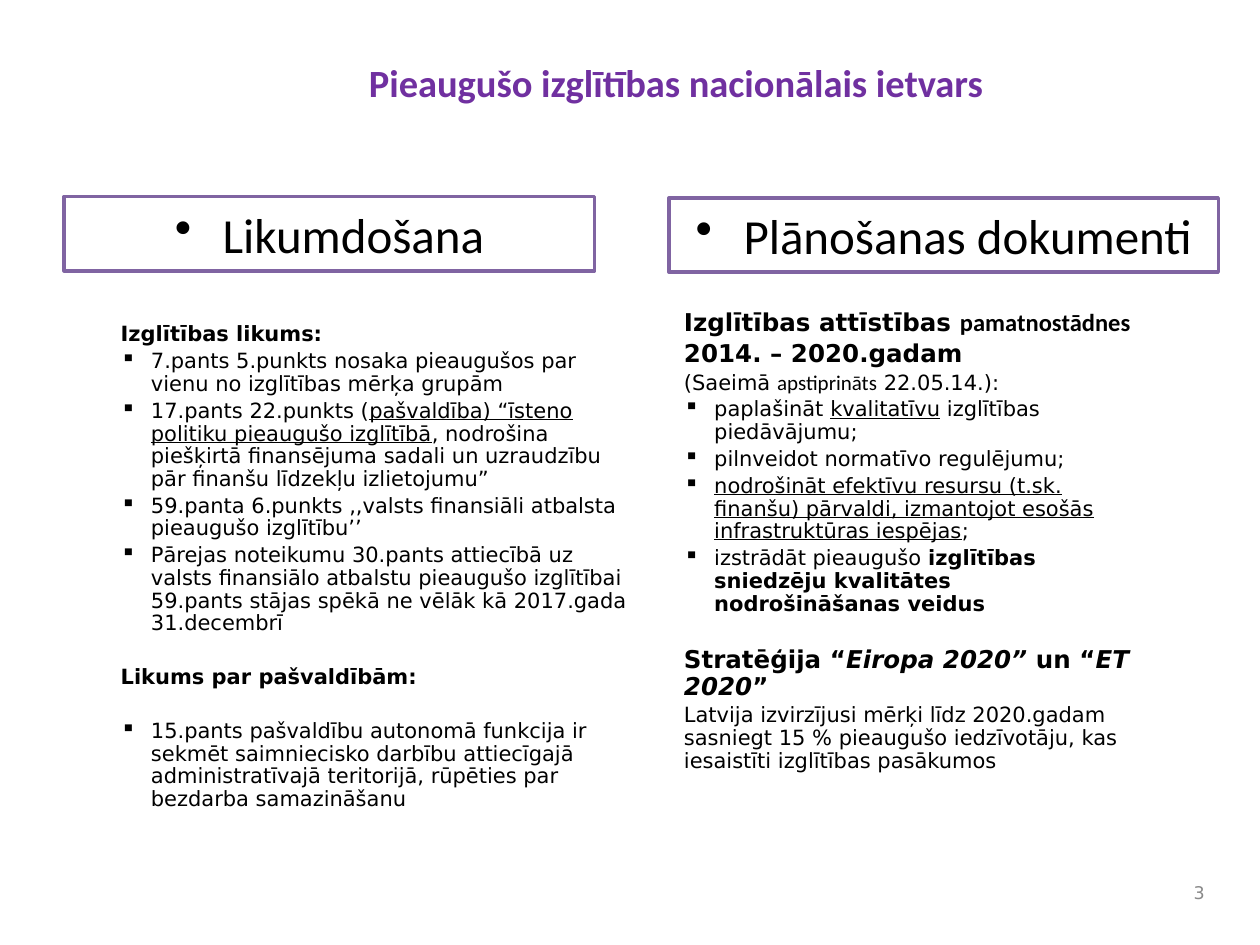
from dataclasses import dataclass
from typing import Optional

from lxml import etree
from pptx import Presentation
from pptx.dml.color import RGBColor
from pptx.enum.shapes import MSO_SHAPE
from pptx.enum.text import MSO_ANCHOR, PP_ALIGN
from pptx.oxml.ns import qn
from pptx.util import Inches, Pt

BLACK = RGBColor(0x00, 0x00, 0x00)
WHITE = RGBColor(0xFF, 0xFF, 0xFF)
PURPLE = RGBColor(0x70, 0x30, 0xA0)
BORDER = RGBColor(0x80, 0x64, 0xA2)
GRAY = RGBColor(0x89, 0x89, 0x89)
RECTANGLE = MSO_SHAPE.RECTANGLE
LEFT, CENTER, RIGHT = PP_ALIGN.LEFT, PP_ALIGN.CENTER, PP_ALIGN.RIGHT
TOP, MIDDLE = MSO_ANCHOR.TOP, MSO_ANCHOR.MIDDLE
HEADING_FONT = "Calibri"
BODY_FONT = "DejaVu Sans"
BLANK_LAYOUT = 6
SECTION_GAP = 15.4


@dataclass(frozen=True)
class Span:
    text: str
    bold: Optional[bool] = None
    italic: Optional[bool] = None
    underline: Optional[bool] = None
    font: Optional[str] = None


@dataclass(frozen=True)
class Line:
    spans: tuple[Span, ...]
    size: int = 12
    bold: bool = False
    bullet: str = ""
    indent: float = 0.24
    gap: float = 0
    spacing: float = 0.9
    font: str = BODY_FONT
    color: RGBColor = BLACK
    align: PP_ALIGN = LEFT


@dataclass(frozen=True)
class Box:
    left: float
    top: float
    width: float
    height: float


def plain(text: str, **options) -> Line:
    return Line((Span(text),), **options)


def item(*spans: Span) -> Line:
    return Line(spans, bullet="▪")


def add_bullet(paragraph, character: str, indent: float) -> None:
    properties = paragraph._p.get_or_add_pPr()
    properties.set("marL", str(Inches(indent)))
    properties.set("indent", str(-Inches(indent)))
    bullet = etree.Element(qn("a:buChar"), char=character)
    properties.find(qn("a:defRPr")).addprevious(bullet)


def write_lines(shape, lines: list[Line], anchor: MSO_ANCHOR = TOP) -> None:
    frame = shape.text_frame
    frame.word_wrap = True
    frame.vertical_anchor = anchor
    for index, line in enumerate(lines):
        paragraph = frame.add_paragraph() if index else frame.paragraphs[0]
        paragraph.alignment = line.align
        paragraph.line_spacing = line.spacing
        paragraph.space_before = Pt(line.size * 0.2 + line.gap)
        font = paragraph.font
        font.name, font.size, font.bold = line.font, Pt(line.size), line.bold
        font.color.rgb = line.color
        if line.bullet:
            add_bullet(paragraph, line.bullet, line.indent)
        for span in line.spans:
            run = paragraph.add_run()
            run.text = span.text
            run.font.bold = span.bold
            run.font.italic = span.italic
            run.font.underline = span.underline
            run.font.name = span.font


def add_text(slide, box: Box, lines: list[Line], anchor: MSO_ANCHOR = TOP) -> None:
    shape = slide.shapes.add_textbox(
        Inches(box.left), Inches(box.top), Inches(box.width), Inches(box.height))
    write_lines(shape, lines, anchor)


def add_panel(slide, box: Box, lines: list[Line], anchor: MSO_ANCHOR = TOP,
              bordered: bool = False) -> None:
    shape = slide.shapes.add_shape(
        RECTANGLE,
        Inches(box.left), Inches(box.top), Inches(box.width), Inches(box.height))
    shape.shadow.inherit = False
    shape.fill.solid()
    shape.fill.fore_color.rgb = WHITE
    if bordered:
        shape.line.color.rgb = BORDER
        shape.line.width = Pt(2)
    else:
        shape.line.fill.background()
    write_lines(shape, lines, anchor)


def add_header(slide, box: Box, text: str) -> None:
    header = plain(text, size=28, bullet="•", indent=0.38, spacing=1.0,
                   font=HEADING_FONT, align=CENTER)
    add_panel(slide, box, [header], MIDDLE, bordered=True)


LAWS = [
    plain("Izglītības likums:", bold=True),
    item(Span("7.pants 5.punkts nosaka pieaugušos par vienu no izglītības mērķa grupām")),
    item(Span("17.pants 22.punkts ("),
         Span("pašvaldība) “īsteno politiku pieaugušo izglītībā", underline=True),
         Span(", nodrošina piešķirtā finansējuma sadali un uzraudzību pār finanšu "
              "līdzekļu izlietojumu”")),
    item(Span("59.panta 6.punkts ,,valsts finansiāli atbalsta pieaugušo izglītību’’")),
    item(Span("Pārejas noteikumu 30.pants attiecībā uz valsts finansiālo atbalstu "
              "pieaugušo izglītībai 59.pants stājas spēkā ne vēlāk kā 2017.gada "
              "31.decembrī")),
    plain("Likums par pašvaldībām:", bold=True, gap=SECTION_GAP),
    Line((Span("15.pants pašvaldību autonomā funkcija ir sekmēt saimniecisko darbību "
               "attiecīgajā administratīvajā teritorijā, rūpēties par bezdarba "
               "samazināšanu"),), bullet="▪", gap=SECTION_GAP),
]

PLANS = [
    Line((Span("Izglītības attīstības "), Span("pamatnostādnes", font=HEADING_FONT)),
         size=14, bold=True),
    plain("2014. – 2020.gadam", size=14, bold=True),
    Line((Span("(Saeimā "), Span("apstiprināts", font=HEADING_FONT),
          Span(" 22.05.14.):"))),
    item(Span("paplašināt "), Span("kvalitatīvu", underline=True),
         Span(" izglītības piedāvājumu;")),
    item(Span("pilnveidot normatīvo regulējumu;")),
    item(Span("nodrošināt efektīvu resursu (t.sk. finanšu) pārvaldi, izmantojot esošās "
              "infrastruktūras iespējas", underline=True), Span(";")),
    item(Span("izstrādāt pieaugušo "),
         Span("izglītības sniedzēju kvalitātes nodrošināšanas veidus", bold=True)),
    Line((Span("Stratēģija “"), Span("Eiropa 2020”", italic=True), Span(" un “"),
          Span("ET 2020", italic=True), Span("”")),
         size=14, bold=True, gap=SECTION_GAP),
    plain("Latvija izvirzījusi mērķi līdz 2020.gadam sasniegt 15 % pieaugušo "
          "iedzīvotāju, kas iesaistīti izglītības pasākumos"),
]


def main() -> None:
    presentation = Presentation()
    presentation.slide_width = Inches(10)
    presentation.slide_height = Inches(7.5)
    slide = presentation.slides.add_slide(presentation.slide_layouts[BLANK_LAYOUT])

    title = plain("Pieaugušo izglītības nacionālais ietvars", size=22, bold=True,
                  spacing=1.0, font=HEADING_FONT, color=PURPLE)
    page_number = plain("3", size=10, spacing=1.0, color=GRAY, align=RIGHT)
    add_text(slide, Box(2.83, 0.42, 6.16, 0.6), [title])
    add_text(slide, Box(9.33, 6.92, 0.33, 0.33), [page_number], MIDDLE)
    add_text(slide, Box(0.86, 2.52, 4.23, 4.15), LAWS)
    add_panel(slide, Box(5.33, 2.41, 3.81, 3.99), PLANS)
    add_header(slide, Box(0.51, 1.56, 4.21, 0.59), "Likumdošana")
    add_header(slide, Box(5.31, 1.57, 4.36, 0.59), "Plānošanas dokumenti")

    presentation.save("out.pptx")


if __name__ == "__main__":
    main()
